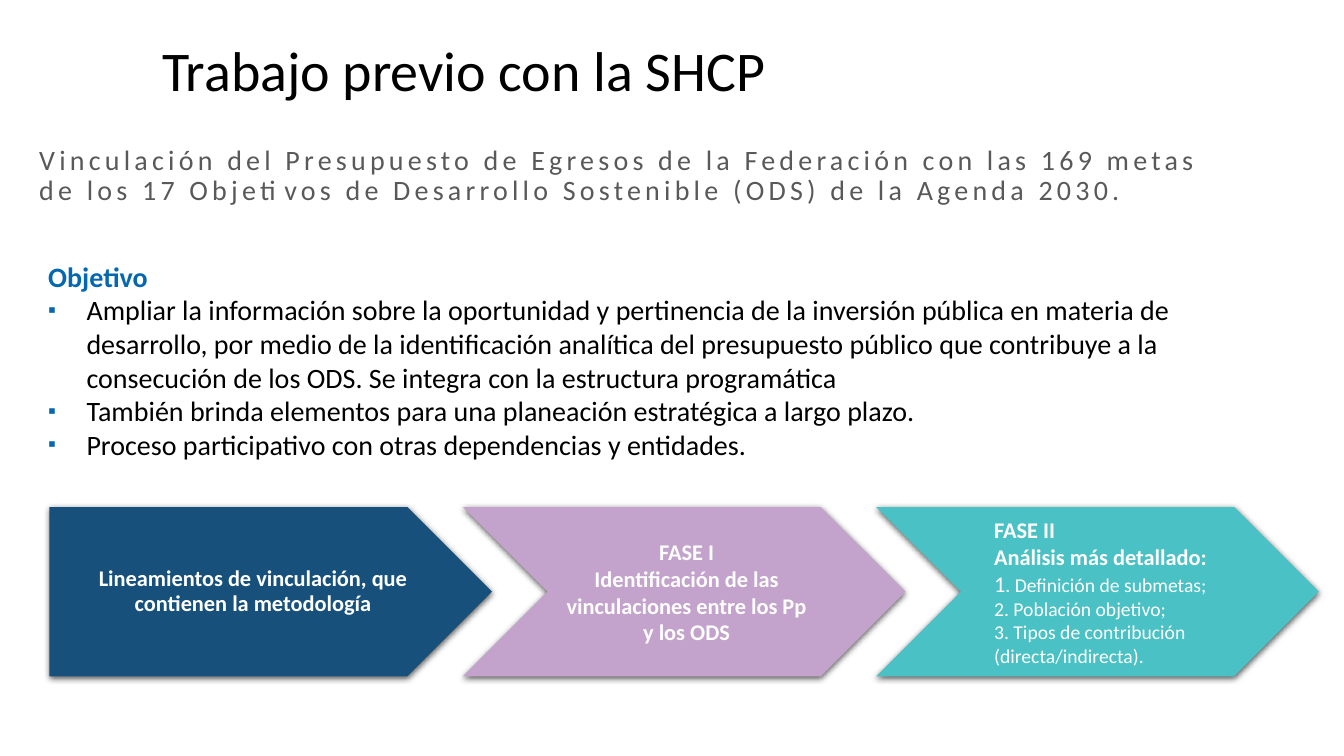
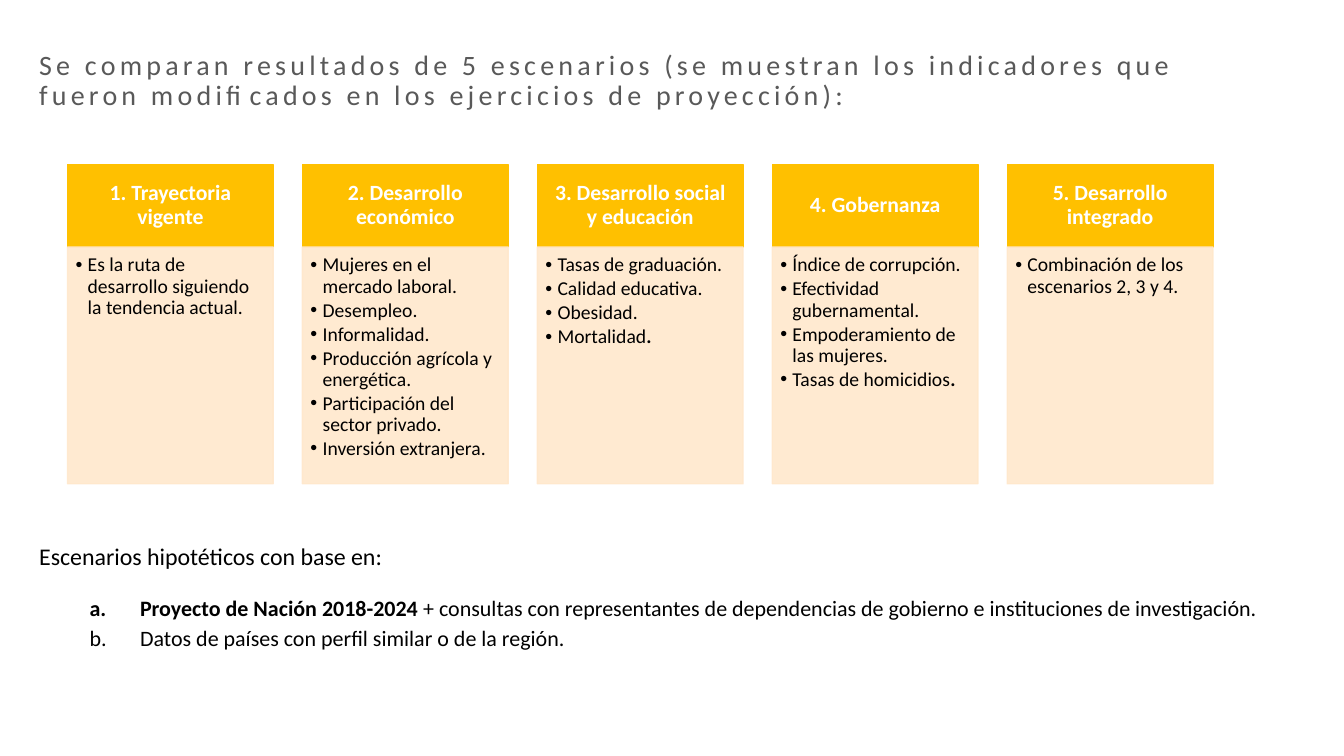
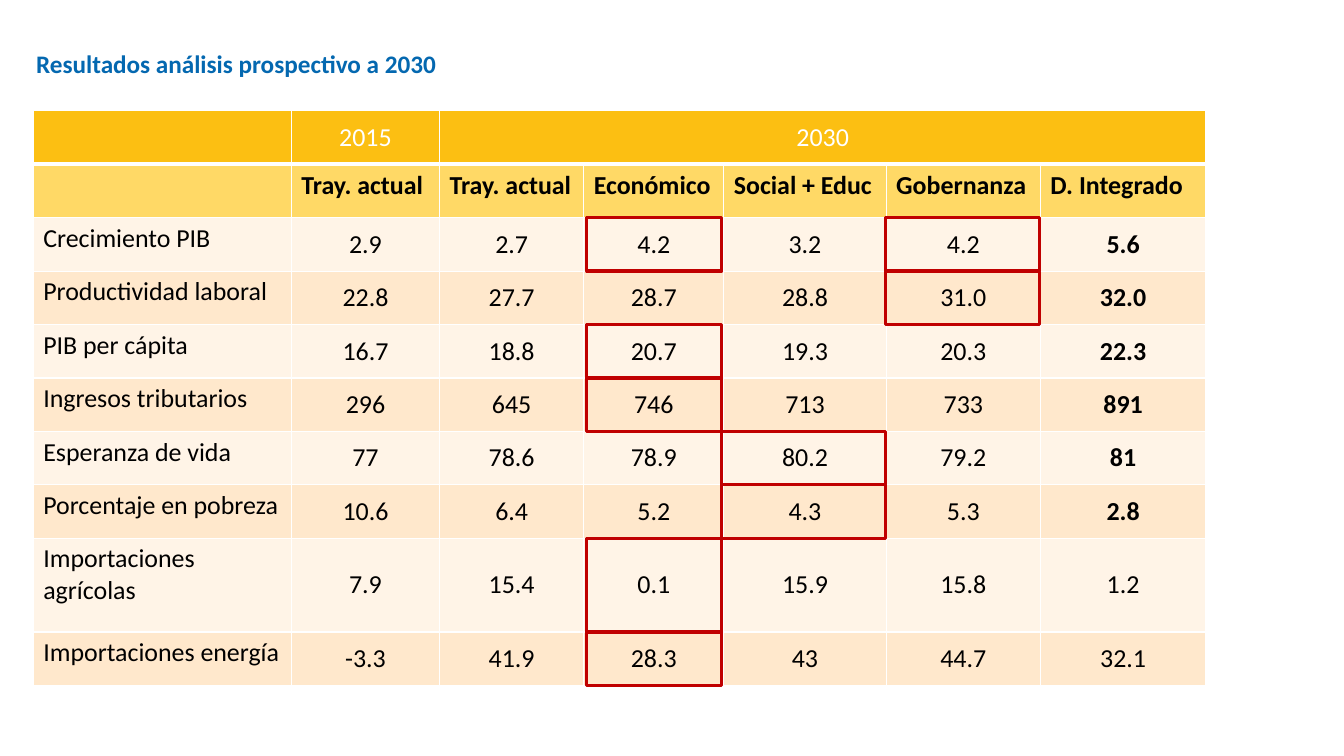
from dataclasses import dataclass
from itertools import accumulate

from lxml import etree
from pptx import Presentation
from pptx.dml.color import RGBColor
from pptx.enum.shapes import MSO_SHAPE
from pptx.enum.text import MSO_ANCHOR, PP_ALIGN
from pptx.oxml.ns import qn
from pptx.util import Inches, Pt

LEFT, CENTER = PP_ALIGN.LEFT, PP_ALIGN.CENTER
TOP, MIDDLE = MSO_ANCHOR.TOP, MSO_ANCHOR.MIDDLE
RECTANGLE = MSO_SHAPE.RECTANGLE
PENTAGON, CHEVRON = MSO_SHAPE.PENTAGON, MSO_SHAPE.CHEVRON


@dataclass(frozen=True)
class Theme:
    font: str = "Calibri"
    black: str = "000000"
    white: str = "FFFFFF"
    gray: str = "595959"
    blue: str = "0468B0"
    navy: str = "17507B"
    lilac: str = "C3A2CC"
    teal: str = "4AC1C4"
    amber: str = "FFC000"
    header: str = "FCBF12"
    subheader: str = "FFD966"
    band_light: str = "FFF4E7"
    band_dark: str = "FFE8CC"
    red: str = "C00000"
    title: float = 40
    body: float = 20
    heading: float = 18
    table: float = 18.5
    note: float = 17.1
    note_item: float = 15.7
    phase: float = 16
    card_title: float = 15.5
    small: float = 14


THEME = Theme()
NO_BOLD = {"bold": False}
BOLD = {"bold": True}
DETAIL = {"size": THEME.small, "bold": False}


# ---- Shared text and shape helpers ----
def add_element(parent, tag, **attributes):
    element = etree.SubElement(parent, qn(tag))
    for name, value in attributes.items():
        element.set(name, str(value))
    return element


def format_run(run, size, color, bold=False, tracking=0):
    font = run.font
    font.name, font.size, font.bold = THEME.font, Pt(size), bold
    font.color.rgb = RGBColor.from_string(color)
    if tracking:
        run._r.get_or_add_rPr().set("spc", str(tracking * 100))


def write_paragraph(paragraph, content, size, color, bold=False, tracking=0,
                    align=LEFT, spacing=1.0, before=0, after=0):
    """Content is a string or a list of (text, run overrides)."""
    parts = [(content, {})] if isinstance(content, str) else content
    paragraph.alignment, paragraph.line_spacing = align, spacing
    paragraph.space_before, paragraph.space_after = Pt(before), Pt(after)
    base = {"size": size, "color": color, "bold": bold, "tracking": tracking}
    for text, overrides in parts:
        run = paragraph.add_run()
        run.text = text
        format_run(run, **{**base, **overrides})


def write_lines(text_frame, lines, **style):
    for index, line in enumerate(lines):
        paragraph = text_frame.add_paragraph() if index else text_frame.paragraphs[0]
        write_paragraph(paragraph, line, **style)


def add_bullet(paragraph, hanging, left=None, character=None, color=None, percent=100):
    """Without a character the paragraph is lettered a., b., ..."""
    properties = paragraph._p.get_or_add_pPr()
    properties.set("marL", str(Inches(hanging if left is None else left)))
    properties.set("indent", str(-Inches(hanging)))
    if color:
        add_element(add_element(properties, "a:buClr"), "a:srgbClr", val=color)
    add_element(properties, "a:buSzPct", val=percent * 1000)
    if character:
        add_element(properties, "a:buFont", typeface="Arial")
        add_element(properties, "a:buChar", char=character)
    else:
        add_element(properties, "a:buAutoNum", type="alphaLcPeriod")


def set_frame(text_frame, insets, anchor=TOP):
    text_frame.word_wrap = True
    text_frame.vertical_anchor = anchor
    (text_frame.margin_left, text_frame.margin_top,
     text_frame.margin_right, text_frame.margin_bottom) = map(Inches, insets)


def add_text(slide, box, lines=(), **style):
    text_frame = slide.shapes.add_textbox(*map(Inches, box)).text_frame
    set_frame(text_frame, (0.1, 0.05, 0.1, 0.05))
    write_lines(text_frame, lines, **style)
    return text_frame


def add_subtitle(slide, box, text):
    add_text(slide, box, [text], size=THEME.body, color=THEME.gray,
             tracking=3, spacing=0.9)


def add_block(slide, kind, box, fill=None, line=None, line_width=1.0, opacity=100):
    shape = slide.shapes.add_shape(kind, *map(Inches, box))
    shape.shadow.inherit = False
    for paint, color in ((shape.fill, fill), (shape.line.fill, line)):
        if color:
            paint.solid()
            paint.fore_color.rgb = RGBColor.from_string(color)
        else:
            paint.background()
    if line:
        shape.line.width = Pt(line_width)
    if opacity < 100:
        for color in shape._element.spPr.iter(qn("a:srgbClr")):
            add_element(color, "a:alpha", val=opacity * 1000)
    return shape


def add_shadow(shape):
    effects = shape._element.spPr.find(qn("a:effectLst"))
    shadow = add_element(effects, "a:outerShdw", blurRad=Pt(4.5), dist=Pt(1.5),
                         dir=90 * 60000, rotWithShape=0)
    add_element(add_element(shadow, "a:srgbClr", val=THEME.black), "a:alpha", val=63000)


# ---- Slide 1: goal and phases ----
GOALS = [
    "Ampliar la información sobre la oportunidad y pertinencia de la inversión pública "
    "en materia de desarrollo, por medio de la identificación analítica del presupuesto "
    "público que contribuye a la consecución de los ODS. Se integra con la estructura "
    "programática",
    "También brinda elementos para una planeación estratégica a largo plazo.",
    "Proceso participativo con otras dependencias y entidades.",
]
# Preset, fill, left and right inset, alignment, line spacing, lines
PHASES = [
    (PENTAGON, THEME.navy, 0.1, 0.03, CENTER, 0.9,
     ["Lineamientos de vinculación, que contienen la metodología"]),
    (CHEVRON, THEME.lilac, 0.12, 0.07, CENTER, 1.0,
     ["FASE I", "Identificación de las vinculaciones entre los Pp y los ODS"]),
    (CHEVRON, THEME.teal, 0.33, 0, LEFT, 1.0,
     ["FASE II", "Análisis más detallado:",
      [("1", NO_BOLD), (". Definición de submetas;", DETAIL)],
      [("2. Población objetivo;", DETAIL)],
      [("3. Tipos de contribución (directa/indirecta).", DETAIL)]]),
]


def add_goals(slide, box):
    text_frame = add_text(slide, box, ["Objetivo"], size=THEME.body, color=THEME.blue,
                          bold=True, spacing=1.7)
    for goal in GOALS:
        paragraph = text_frame.add_paragraph()
        add_bullet(paragraph, 0.38, character="▪", color=THEME.blue, percent=80)
        write_paragraph(paragraph, goal, THEME.body, THEME.black)


def add_phases(slide, left, top, width, height, pitch):
    for index, (kind, fill, inset_left, inset_right, align, spacing, lines) in enumerate(PHASES):
        shape = add_block(slide, kind, (left + index * pitch, top, width, height), fill)
        add_shadow(shape)
        set_frame(shape.text_frame, (inset_left, 0.05, inset_right, 0.05), MIDDLE)
        write_lines(shape.text_frame, lines, size=THEME.phase, color=THEME.white,
                    bold=True, align=align, spacing=spacing)


def build_previous_work(slide):
    add_subtitle(slide, (0.29, 1.4, 12.12, 0.83),
                 "Vinculación del Presupuesto de Egresos de la Federación con las 169 metas "
                 "de los 17 Objetivos de Desarrollo Sostenible (ODS) de la Agenda 2030.")
    add_goals(slide, (0.38, 2.29, 12.12, 2.4))
    add_text(slide, (1.51, 0.3, 7.09, 0.77), ["Trabajo previo con la SHCP"],
             size=THEME.title, color=THEME.black)
    add_phases(slide, 0.49, 5.03, 4.39, 1.68, pitch=4.1)


# ---- Slide 2: scenarios ----
SCENARIOS = [
    ("1. Trayectoria vigente", ["Es la ruta de desarrollo siguiendo la tendencia actual."]),
    ("2. Desarrollo económico",
     ["Mujeres en el mercado laboral.", "Desempleo.", "Informalidad.",
      "Producción agrícola y energética.", "Participación del sector privado.",
      "Inversión extranjera."]),
    ("3. Desarrollo social y educación",
     ["Tasas de graduación.", "Calidad educativa.", "Obesidad.",
      [("Mortalidad", {}), (".", BOLD)]]),
    ("4. Gobernanza",
     ["Índice de corrupción.", "Efectividad gubernamental.",
      "Empoderamiento de las mujeres.", [("Tasas de homicidios", {}), (".", BOLD)]]),
    ("5. Desarrollo integrado", ["Combinación de los escenarios 2, 3 y 4."]),
]


def add_scenario(slide, left, top, width, title, indicators):
    title_height, list_height = 0.82, 2.35
    head = add_block(slide, RECTANGLE, (left, top, width, title_height),
                     THEME.amber, THEME.amber)
    set_frame(head.text_frame, (0.12, 0.07, 0.12, 0.07), MIDDLE)
    write_lines(head.text_frame, [title], size=THEME.card_title, color=THEME.white,
                bold=True, align=CENTER, spacing=0.9)

    panel = add_block(slide, RECTANGLE, (left, top + title_height, width, list_height),
                      THEME.band_dark, THEME.band_dark, opacity=90)
    set_frame(panel.text_frame, (0.08, 0.08, 0.11, 0.12))
    write_lines(panel.text_frame, indicators, size=THEME.small, color=THEME.black,
                spacing=0.9, after=2)
    for paragraph in panel.text_frame.paragraphs:
        add_bullet(paragraph, 0.12, character="•")


def add_sources(slide, box):
    text_frame = add_text(slide, box, ["Escenarios hipotéticos con base en:"],
                          size=THEME.note, color=THEME.black, spacing=0.9)
    sources = [
        ([("Proyecto de Nación 2018-2024 ", BOLD),
          ("+ consultas con representantes de dependencias de gobierno e instituciones "
           "de investigación.", {})], 1.3, 11),
        ("Datos de países con perfil similar o de la región.", 0.9, 5),
    ]
    for content, spacing, before in sources:
        paragraph = text_frame.add_paragraph()
        add_bullet(paragraph, 0.5, left=1)
        write_paragraph(paragraph, content, THEME.note_item, THEME.black,
                        spacing=spacing, before=before)


def build_scenarios(slide):
    add_sources(slide, (0.29, 5.36, 12.72, 1.36))
    for index, (title, indicators) in enumerate(SCENARIOS):
        add_scenario(slide, 0.67 + index * 2.33, 1.63, 2.04, title, indicators)
    add_subtitle(slide, (0.29, 0.46, 12.12, 0.8),
                 "Se comparan resultados de 5 escenarios (se muestran los indicadores que "
                 "fueron modificados en los ejercicios de proyección):")


# ---- Slide 3: results table ----
RESULTS = [
    ["", "2015", "2030", "", "", "", ""],
    ["", "Tray. actual", "Tray. actual", "Económico", "Social + Educ", "Gobernanza",
     "D. Integrado"],
    ["Crecimiento PIB", "2.9", "2.7", "4.2", "3.2", "4.2", "5.6"],
    ["Productividad laboral", "22.8", "27.7", "28.7", "28.8", "31.0", "32.0"],
    ["PIB per cápita", "16.7", "18.8", "20.7", "19.3", "20.3", "22.3"],
    ["Ingresos tributarios", "296", "645", "746", "713", "733", "891"],
    ["Esperanza de vida", "77", "78.6", "78.9", "80.2", "79.2", "81"],
    ["Porcentaje en pobreza", "10.6", "6.4", "5.2", "4.3", "5.3", "2.8"],
    ["Importaciones agrícolas", "7.9", "15.4", "0.1", "15.9", "15.8", "1.2"],
    ["Importaciones energía", "-3.3", "41.9", "28.3", "43", "44.7", "32.1"],
]
COLUMN_WIDTHS = [2.56, 1.47, 1.43, 1.39, 1.61, 1.53, 1.64]
ROW_HEIGHTS = [0.53] * 8 + [0.93, 0.53]
# Left, width and table rows of the framed results
HIGHLIGHTS = [(5.82, 1.34, (2, 4, 5, 8, 9)), (7.16, 1.62, (6, 7)), (8.78, 1.53, (2, 3))]


def set_borders(cell, bottom_width):
    properties = cell._tc.get_or_add_tcPr()
    widths = {"a:lnL": 1, "a:lnR": 1, "a:lnT": 1, "a:lnB": bottom_width}
    for index, (tag, width) in enumerate(widths.items()):
        border = etree.Element(qn(tag), w=str(Pt(width)))
        add_element(add_element(border, "a:solidFill"), "a:srgbClr", val=THEME.white)
        properties.insert(index, border)


def style_cell(cell, text, row, column):
    is_header, is_subheader = row == 0, row == 1
    is_number = column > 0 and not is_subheader
    band = THEME.band_dark if row % 2 else THEME.band_light
    color = THEME.header if is_header else THEME.subheader if is_subheader else band
    cell.fill.solid()
    cell.fill.fore_color.rgb = RGBColor.from_string(color)
    set_borders(cell, 3 if is_header else 1)
    cell.vertical_anchor = MIDDLE if is_number else TOP
    if text:
        write_paragraph(cell.text_frame.paragraphs[0], text, THEME.table,
                        THEME.white if is_header else THEME.black,
                        bold=is_subheader or (column == 6 and 2 <= row <= 7),
                        align=CENTER if is_number else LEFT)


def add_results(slide, left, top):
    frame = slide.shapes.add_table(
        len(ROW_HEIGHTS), len(COLUMN_WIDTHS), Inches(left), Inches(top),
        Inches(sum(COLUMN_WIDTHS)), Inches(sum(ROW_HEIGHTS)))
    table = frame.table
    table.first_row = table.horz_banding = False
    for column, width in zip(table.columns, COLUMN_WIDTHS):
        column.width = Inches(width)
    for row, height in zip(table.rows, ROW_HEIGHTS):
        row.height = Inches(height)
    for row, values in enumerate(RESULTS):
        for column, text in enumerate(values):
            style_cell(table.cell(row, column), text, row, column)
    table.cell(0, 2).merge(table.cell(0, 6))


def add_highlights(slide, top):
    row_tops = list(accumulate(ROW_HEIGHTS, initial=top))
    for left, width, rows in HIGHLIGHTS:
        for row in rows:
            add_block(slide, RECTANGLE, (left, row_tops[row], width, ROW_HEIGHTS[row]),
                      line=THEME.red, line_width=2.25)


def build_results(slide):
    table_top = 1.1
    add_results(slide, 0.33, table_top)
    add_text(slide, (0.26, 0.43, 4.5, 0.4), ["Resultados análisis prospectivo a 2030"],
             size=THEME.heading, color=THEME.blue, bold=True)
    add_highlights(slide, table_top)


def main():
    presentation = Presentation()
    presentation.slide_width, presentation.slide_height = Inches(13.33), Inches(7.5)
    blank = presentation.slide_layouts[6]
    for build in (build_previous_work, build_scenarios, build_results):
        build(presentation.slides.add_slide(blank))
    presentation.save("out.pptx")


if __name__ == "__main__":
    main()
